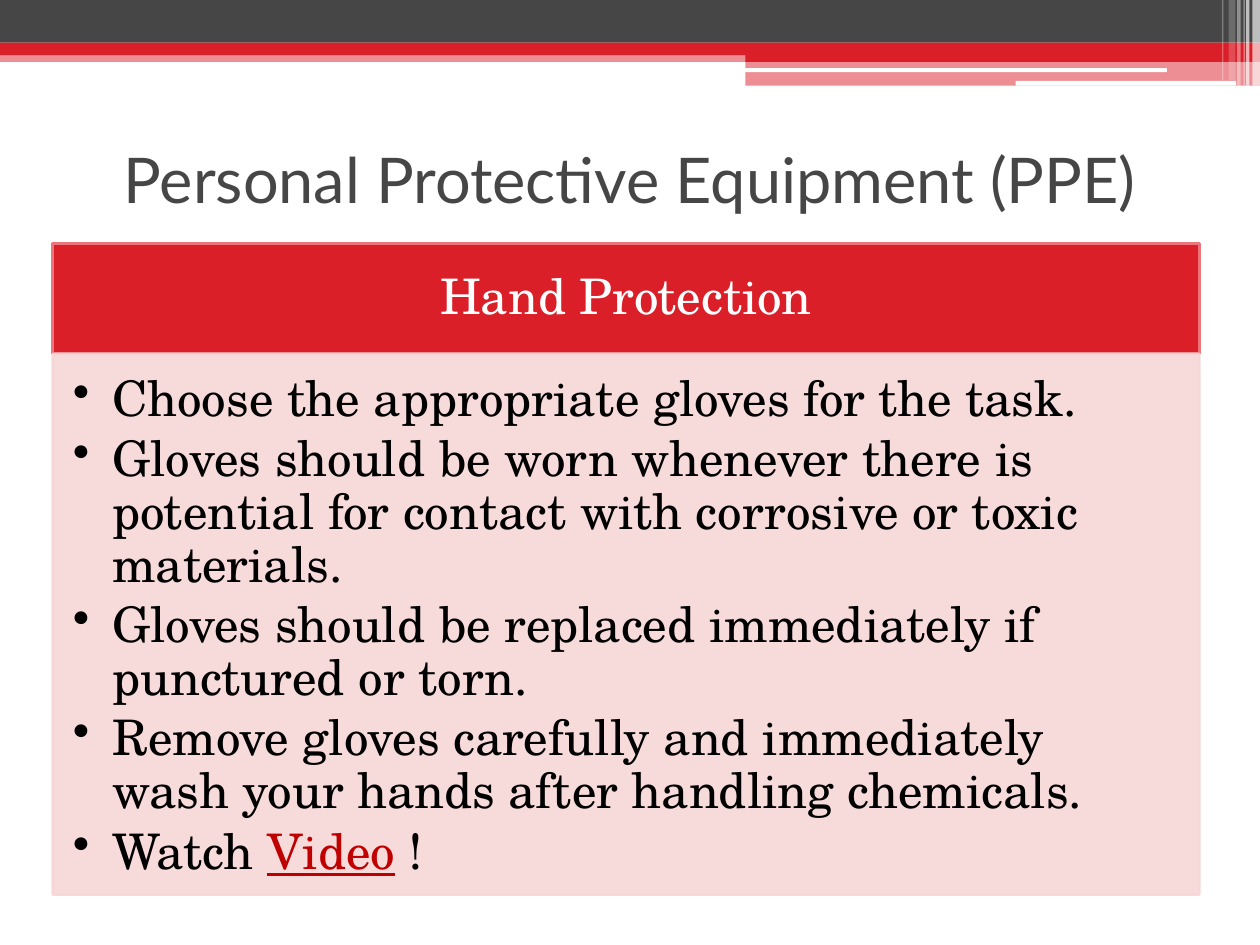
from dataclasses import dataclass

from lxml.etree import SubElement
from pptx import Presentation
from pptx.dml.color import RGBColor
from pptx.enum.shapes import MSO_SHAPE
from pptx.enum.text import MSO_ANCHOR, PP_ALIGN
from pptx.oxml.ns import qn
from pptx.util import Pt


@dataclass(frozen=True)
class Theme:
    red: str = "DA1F28"
    red_edge: str = "EB757B"
    pink: str = "F7D6D7"
    charcoal: str = "464646"
    white: str = "FFFFFF"
    black: str = "000000"
    link: str = "C00000"
    title_font: str = "Lato"
    body_font: str = "TeX Gyre Schola"
    title_size: int = 36
    body_size: int = 28


THEME = Theme()

# Top decoration: left, top, width, height, colour, opacity in percent
BANDS = [
    (0, 28.8, 720, 6.6, THEME.red, 50),
    (0, 0, 720, 24.4, THEME.charcoal, 100),
    (0, 24.4, 720, 7.2, THEME.red, 100),
    (426, 28.2, 294, 7.2, THEME.red, 100),
    (426, 34.8, 294, 14.2, THEME.red, 50),
]
WHITE_BARS = [
    (425.6, 39, 241.2, 2.2, THEME.white, 100),
    (580.4, 46.2, 126, 2.7, THEME.white, 100),
]
# Vertical stripes: left, width, height, opacity in percent
STRIPES = [
    (715.6, 4.4, 49, 65),
    (712, 2, 49, 65),
    (710.6, 0.7, 49, 60),
    (707, 2, 49, 40),
    (702, 4, 46, 20),
    (698.4, 0.7, 46, 30),
]

CARD_LEFT, CARD_WIDTH = 30.2, 655.2
HEADER_TOP, HEADER_HEIGHT, BODY_HEIGHT = 139, 63.2, 309

RULES = [
    [("Choose the appropriate gloves for the task.", False)],
    [("Gloves should be worn whenever there is potential for contact with "
      "corrosive or toxic materials.", False)],
    [("Gloves should be replaced immediately if punctured or torn.", False)],
    [("Remove gloves carefully and immediately wash your hands after "
      "handling chemicals.", False)],
    [("Watch ", False), ("Video", True), (" !", False)],
]


def set_opacity(fill_parent, percent):
    """Make the solid fill held by an XML element partly transparent."""
    if percent < 100:
        color = fill_parent.find(qn("a:solidFill"))[0]
        SubElement(color, qn("a:alpha"), val=str(percent * 1000))


def add_block(page, left, top, width, height, color, opacity=100,
              kind=MSO_SHAPE.RECTANGLE, edge=None):
    block = page.shapes.add_shape(kind, Pt(left), Pt(top), Pt(width), Pt(height))
    block.shadow.inherit = False
    block.fill.solid()
    block.fill.fore_color.rgb = RGBColor.from_string(color)
    set_opacity(block._element.spPr, opacity)
    if edge:
        block.line.width = Pt(1.5)
        block.line.color.rgb = RGBColor.from_string(edge)
        set_opacity(block.line._get_or_add_ln(), opacity)
    else:
        block.line.fill.background()
    return block


def set_frame(box, anchor, margins):
    frame = box.text_frame
    frame.word_wrap = True
    frame.vertical_anchor = anchor
    (frame.margin_left, frame.margin_top,
     frame.margin_right, frame.margin_bottom) = [Pt(m) for m in margins]
    return frame


def style_para(para, font, size, color, align):
    para.alignment = align
    para.font.name = font
    para.font.size = Pt(size)
    para.font.color.rgb = RGBColor.from_string(color)


def add_bullet(para, indent):
    props = para._p.get_or_add_pPr()
    props.set("marL", str(Pt(indent)))
    props.set("indent", str(-Pt(indent)))
    bullet = props.makeelement(qn("a:buChar"), {"char": "•"})
    props.insert_element_before(bullet, "a:tabLst", "a:defRPr", "a:extLst")


def add_decoration(page):
    for band in BANDS:
        add_block(page, *band)
    for bar in WHITE_BARS:
        add_block(page, *bar, kind=MSO_SHAPE.ROUNDED_RECTANGLE)
    for left, width, height, opacity in STRIPES:
        add_block(page, left, 0, width, height, THEME.white, opacity)


def add_title(page, text):
    box = page.shapes.add_textbox(Pt(36), Pt(66.2), Pt(648), Pt(72))
    para = set_frame(box, MSO_ANCHOR.MIDDLE, (7.2, 3.6, 7.2, 3.6)).paragraphs[0]
    para.text = text
    style_para(para, THEME.title_font, THEME.title_size, THEME.charcoal,
               PP_ALIGN.CENTER)


def add_header(page, text):
    header = add_block(page, CARD_LEFT, HEADER_TOP, CARD_WIDTH, HEADER_HEIGHT,
                       THEME.red, edge=THEME.red_edge)
    para = set_frame(header, MSO_ANCHOR.MIDDLE, (15.8, 8.6, 15.8, 8.6)).paragraphs[0]
    para.text = text
    para.line_spacing = 0.9
    style_para(para, THEME.body_font, THEME.body_size, THEME.white,
               PP_ALIGN.CENTER)


def add_rules(page, rules):
    body = add_block(page, CARD_LEFT, HEADER_TOP + HEADER_HEIGHT, CARD_WIDTH,
                     BODY_HEIGHT, THEME.pink, 90, edge=THEME.pink)
    frame = set_frame(body, MSO_ANCHOR.TOP, (11.5, 11.5, 15.8, 17.3))
    for index, parts in enumerate(rules):
        para = frame.add_paragraph() if index else frame.paragraphs[0]
        para.line_spacing = 0.9
        para.space_after = Pt(THEME.body_size * 0.15)
        style_para(para, THEME.body_font, THEME.body_size, THEME.black,
                   PP_ALIGN.LEFT)
        add_bullet(para, 22.5)
        for text, is_link in parts:
            span = para.add_run()
            span.text = text
            if is_link:
                span.font.underline = True
                span.font.color.rgb = RGBColor.from_string(THEME.link)


def main():
    deck = Presentation()
    deck.slide_width, deck.slide_height = Pt(720), Pt(540)
    page = deck.slides.add_slide(deck.slide_layouts[6])
    add_decoration(page)
    add_header(page, "Hand Protection")
    add_rules(page, RULES)
    add_title(page, "Personal Protective Equipment (PPE)")
    deck.save("out.pptx")


if __name__ == "__main__":
    main()
